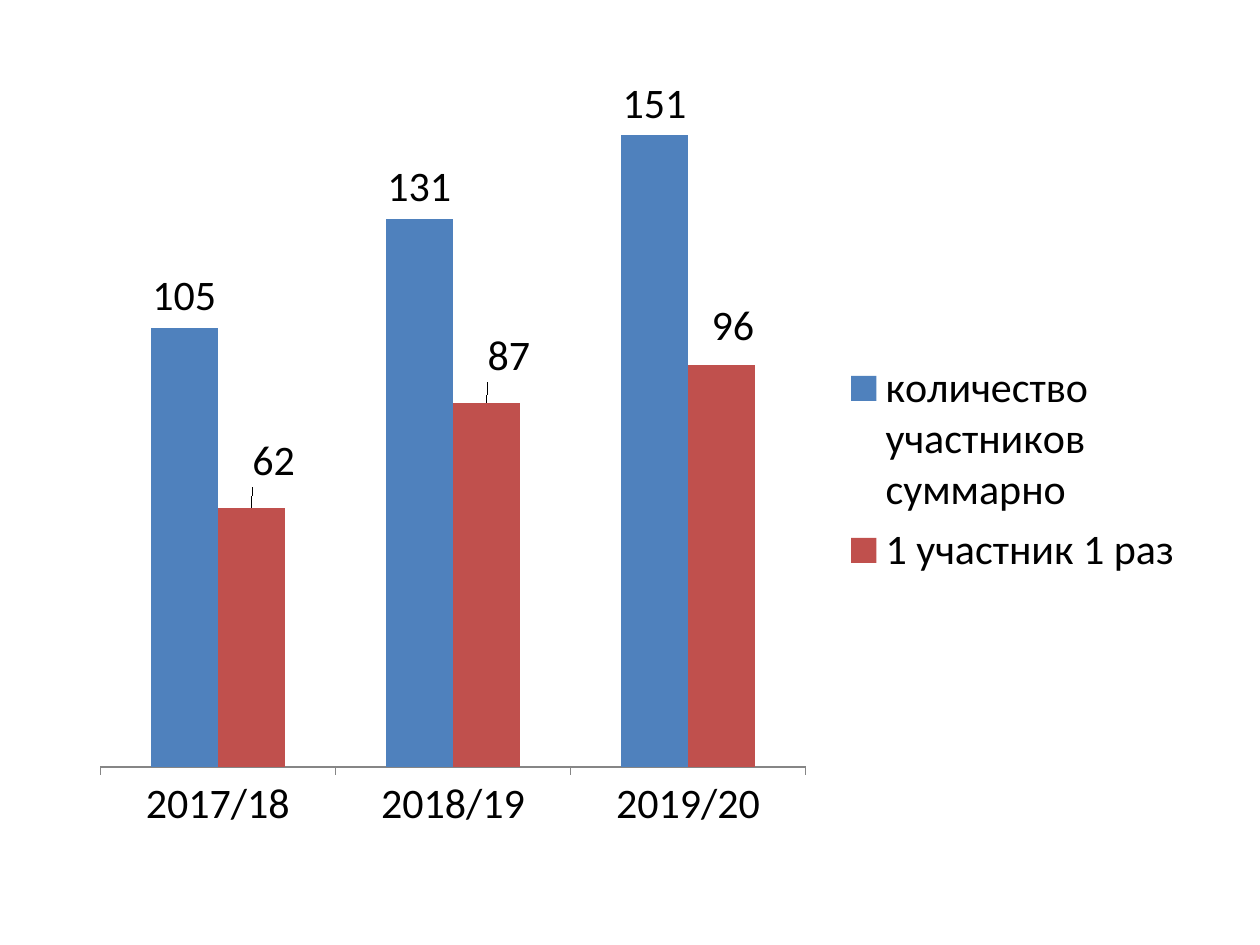
from pptx import Presentation
from pptx.chart.data import CategoryChartData
from pptx.dml.color import RGBColor
from pptx.enum.chart import (XL_CHART_TYPE, XL_LABEL_POSITION,
                             XL_LEGEND_POSITION, XL_TICK_MARK)
from pptx.oxml import parse_xml
from pptx.oxml.ns import nsdecls
from pptx.util import Inches, Pt

COLUMN = XL_CHART_TYPE.COLUMN_CLUSTERED
ABOVE = XL_LABEL_POSITION.OUTSIDE_END
RIGHT = XL_LEGEND_POSITION.RIGHT
OUTSIDE = XL_TICK_MARK.OUTSIDE

BLACK = RGBColor(0x00, 0x00, 0x00)
GRAY = RGBColor(0x86, 0x86, 0x86)
BLUE = RGBColor(0x4F, 0x81, 0xBD)
RED = RGBColor(0xC0, 0x50, 0x4D)

YEARS = ["2017/18", "2018/19", "2019/20"]
SERIES = [
    ("количество участников суммарно", [105, 131, 151], BLUE),
    ("1 участник 1 раз", [62, 87, 96], RED),
]
# Label shifts of the second series, as shares of the chart size
SHIFTS = [(0.02, -0.02), (0.02, -0.02), (0.01, -0.01)]


def layout(parts):
    """Return a manual c:layout element from (tag, value) pairs."""
    body = "".join(f'<c:{tag} val="{val}"/>' for tag, val in parts)
    return parse_xml(f'<c:layout {nsdecls("c")}><c:manualLayout>{body}'
                     '</c:manualLayout></c:layout>')


def frame(x, y, w, h):
    return [("xMode", "edge"), ("yMode", "edge"),
            ("x", x), ("y", y), ("w", w), ("h", h)]


def style(font):
    font.name = "Calibri"
    font.size = Pt(24)
    font.color.rgb = BLACK


prs = Presentation()
prs.slide_width, prs.slide_height = Inches(10), Inches(7.5)
slide = prs.slides.add_slide(prs.slide_layouts[6])

data = CategoryChartData()
data.categories = YEARS
for name, vals, _ in SERIES:
    data.add_series(name, vals)
chart = slide.shapes.add_chart(COLUMN, Inches(0.62), Inches(0.62),
                               Inches(8.83), Inches(6.09), data).chart
chart.has_title = False
style(chart.font)

years = chart.category_axis
years.major_tick_mark = OUTSIDE
years.format.line.color.rgb = GRAY
style(years.tick_labels.font)
scale = chart.value_axis
scale.minimum_scale, scale.maximum_scale = 0, 160
scale.has_major_gridlines = False
scale.visible = False

chart.has_legend = True
legend = chart.legend
legend.position = RIGHT
legend.include_in_layout = False
style(legend.font)
legend._element.find("{*}legendPos").addnext(
    layout(frame(0.68, 0.36, 0.32, 0.3)))

plot = chart.plots[0]
plot.gap_width = 150
plot.overlap = 0
plot.vary_by_categories = False
for series, (_, _, color) in zip(plot.series, SERIES):
    series.format.fill.solid()
    series.format.fill.fore_color.rgb = color
    labels = series.data_labels
    labels.show_value = True
    labels.position = ABOVE
    style(labels.font)

for i, (x, y) in enumerate(SHIFTS):
    label = plot.series[1].points[i].data_label
    style(label.font)
    label.position = ABOVE
    item = plot.series[1].data_labels._element.findall("{*}dLbl")[i]
    item.find("{*}idx").addnext(layout([("x", x), ("y", y)]))

area = chart._chartSpace.chart.plotArea
old = area.find("{*}layout")
if old is not None:
    area.remove(old)
area.insert(0, layout([("layoutTarget", "inner")]
                      + frame(0.02, 0.025, 0.634, 0.873)))

prs.save("out.pptx")
